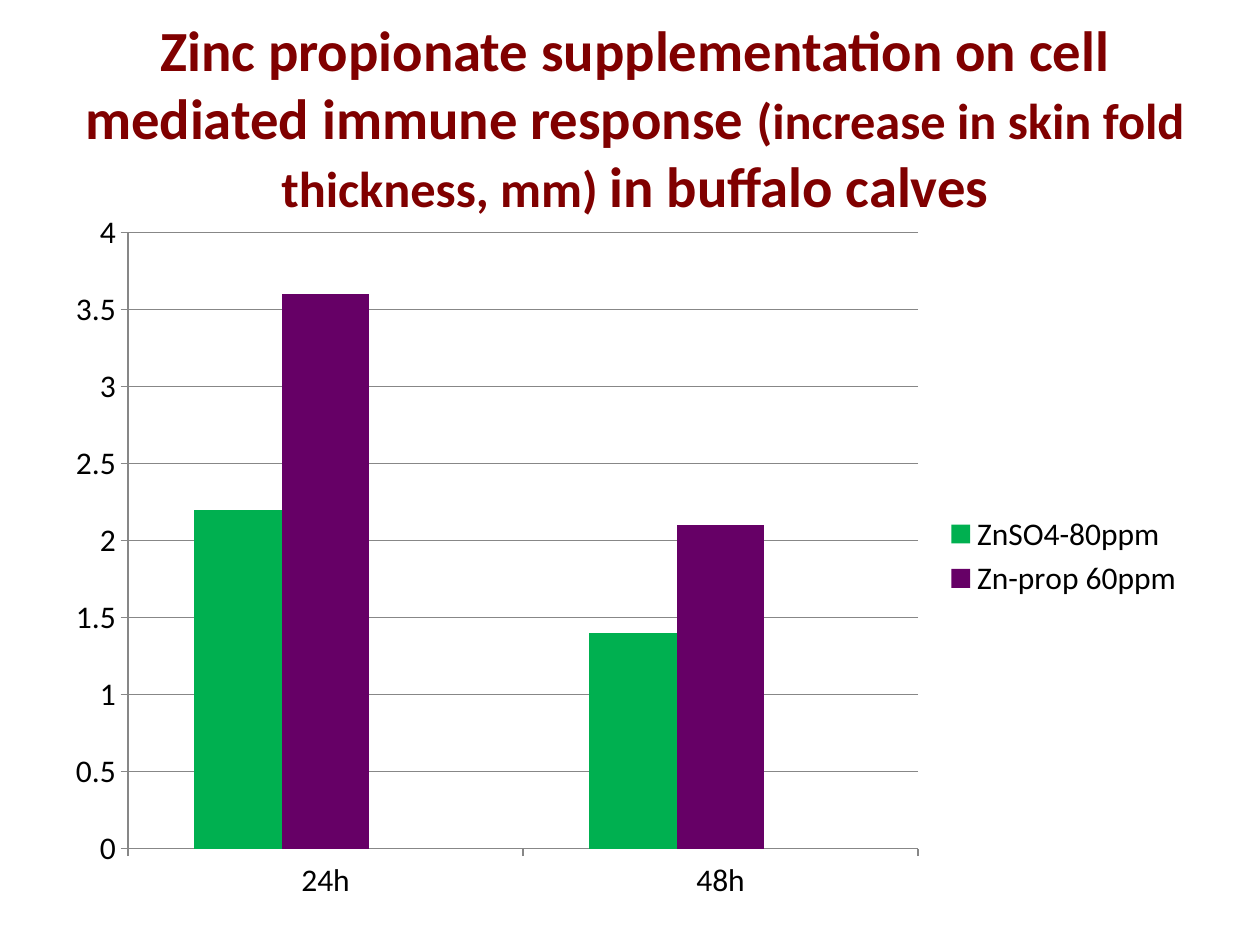
from dataclasses import dataclass

import pptx
import pptx.chart.data
import pptx.dml.color
import pptx.enum.chart
import pptx.enum.text
import pptx.oxml
import pptx.oxml.ns
import pptx.util
from pptx.util import Inches


@dataclass(frozen=True)
class Theme:
    font: str = "Calibri"
    title: str = "800000"
    text: str = "000000"
    grid: str = "878787"
    series: tuple = ("00B050", "660066", "9BBB59")
    title_size: float = 32.4
    note_size: float = 28.8
    chart_size: float = 18


class SlideBuilder:
    def __init__(self, deck, theme):
        self.theme = theme
        self.slide = deck.slides.add_slide(deck.slide_layouts[6])

    def style_font(self, font, size, color, bold=False):
        font.name = self.theme.font
        font.size = pptx.util.Pt(size)
        font.bold = bold
        font.color.rgb = pptx.dml.color.RGBColor.from_string(color)

    def add_title(self, left, top, width, height, parts):
        box = self.slide.shapes.add_textbox(left, top, width, height)
        frame = box.text_frame
        frame.word_wrap = True
        frame.vertical_anchor = pptx.enum.text.MSO_ANCHOR.MIDDLE
        para = frame.paragraphs[0]
        para.alignment = pptx.enum.text.PP_ALIGN.CENTER
        for text, size in parts:
            span = para.add_run()
            span.text = text
            self.style_font(span.font, size, self.theme.title, bold=True)

    def add_column_chart(self, left, top, width, height, categories, series):
        data = pptx.chart.data.CategoryChartData()
        data.categories = categories
        for name, values in series:
            data.add_series(name, values)
        kind = pptx.enum.chart.XL_CHART_TYPE.COLUMN_CLUSTERED
        chart = self.slide.shapes.add_chart(
            kind, left, top, width, height, data
        ).chart
        chart.has_title = False
        self.style_font(chart.font, self.theme.chart_size, self.theme.text)
        plot = chart.plots[0]
        plot.gap_width = 150
        plot.vary_by_categories = False
        for column, color in zip(plot.series, self.theme.series):
            column.format.fill.solid()
            column.format.fill.fore_color.rgb = (
                pptx.dml.color.RGBColor.from_string(color)
            )
        self.style_axes(chart)
        self.add_legend(chart, hidden_entry=2)

    def style_axes(self, chart):
        axis = chart.value_axis
        axis.minimum_scale, axis.maximum_scale, axis.major_unit = 0, 4, 0.5
        axis.has_major_gridlines = True
        for part in (axis, chart.category_axis, axis.major_gridlines):
            part.format.line.width = pptx.util.Pt(0.75)
            part.format.line.color.rgb = (
                pptx.dml.color.RGBColor.from_string(self.theme.grid)
            )
        for scale in (axis, chart.category_axis):
            scale.major_tick_mark = pptx.enum.chart.XL_TICK_MARK.OUTSIDE

    def add_legend(self, chart, hidden_entry):
        chart.has_legend = True
        legend = chart.legend
        legend.position = pptx.enum.chart.XL_LEGEND_POSITION.RIGHT
        legend.include_in_layout = False
        entry = pptx.oxml.parse_xml(
            f'<c:legendEntry {pptx.oxml.ns.nsdecls("c")}>'
            f'<c:idx val="{hidden_entry}"/><c:delete val="1"/>'
            "</c:legendEntry>"
        )
        position = chart.element.find(".//" + pptx.oxml.ns.qn("c:legendPos"))
        position.addnext(entry)


def main():
    deck = pptx.Presentation()
    deck.slide_width, deck.slide_height = Inches(10), Inches(7.5)
    theme = Theme()
    page = SlideBuilder(deck, theme)
    page.add_title(
        Inches(0.33), Inches(0.3), Inches(9.42), Inches(1.25),
        [
            ("Zinc propionate supplementation on cell mediated immune response ",
             theme.title_size),
            ("(increase in skin fold thickness, mm) ", theme.note_size),
            ("in buffalo calves", theme.title_size),
        ],
    )
    page.add_column_chart(
        Inches(0.42), Inches(1.58), Inches(9.08), Inches(5.67),
        ["24h", "48h"],
        [
            ("ZnSO4-80ppm", (2.2, 1.4)),
            ("Zn-prop 60ppm", (3.6, 2.1)),
            ("Series 3", (None, None)),
        ],
    )
    deck.save("out.pptx")


if __name__ == "__main__":
    main()
